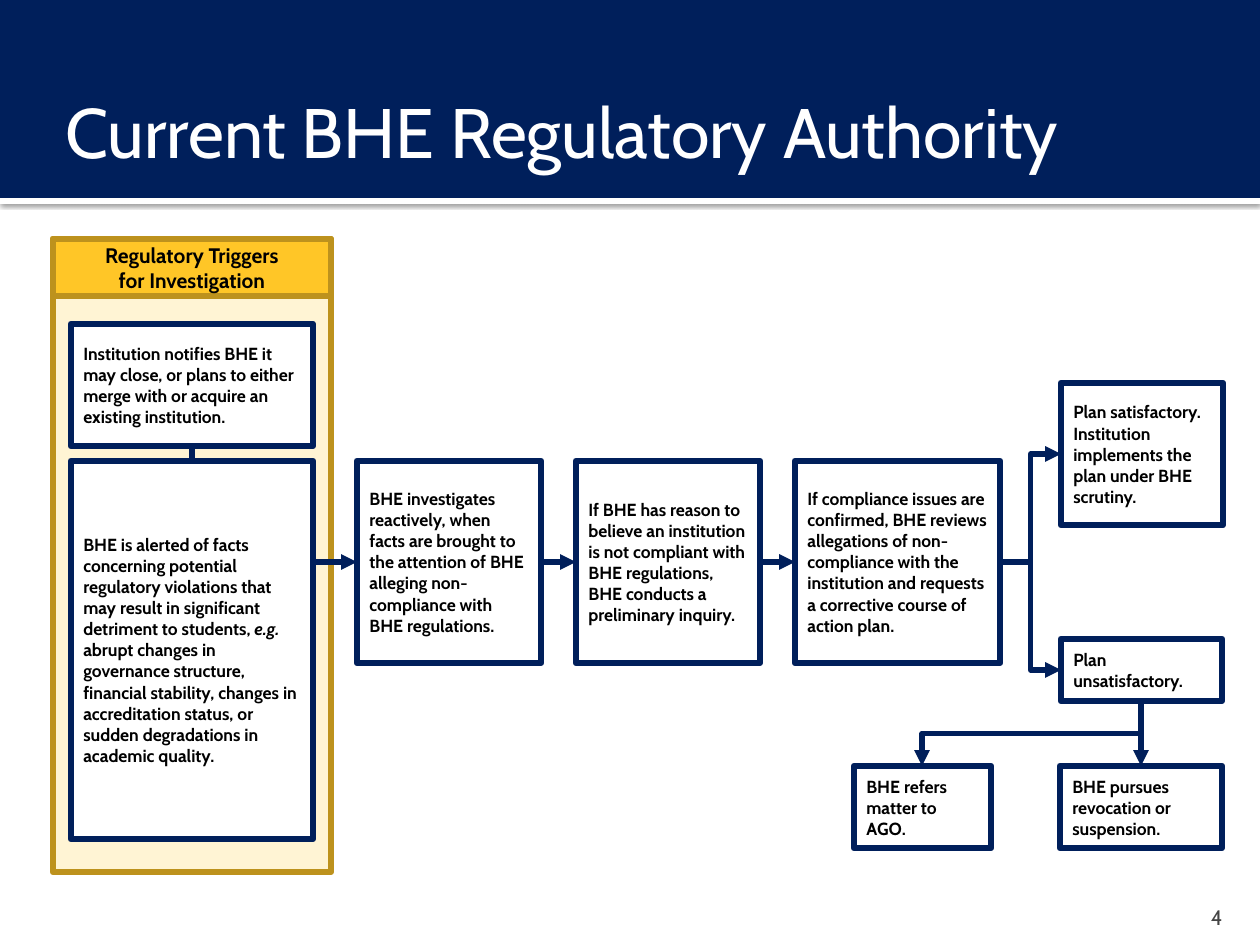
from dataclasses import dataclass
from itertools import pairwise

from lxml.etree import SubElement
from pptx import Presentation
from pptx.dml.color import RGBColor
from pptx.enum.shapes import MSO_CONNECTOR, MSO_SHAPE
from pptx.enum.text import MSO_ANCHOR, MSO_AUTO_SIZE, PP_ALIGN
from pptx.oxml.ns import qn
from pptx.util import Emu, Pt

EMU_PER_PX = 914400 / 126
FONT = "Cabin"
NAVY, WHITE, BLACK, GRAY = "001F5B", "FFFFFF", "000000", "454545"
GOLD, DARK_GOLD, CREAM = "FFC627", "BD921D", "FFF4D4"


@dataclass(frozen=True)
class Run:
    text: str
    italic: bool = False


@dataclass(frozen=True)
class Box:
    x: int
    y: int
    w: int
    h: int
    paragraphs: tuple[tuple[Run, ...], ...] = ()
    fill: str = WHITE
    border: str | None = NAVY
    size: int = 10
    align: PP_ALIGN = PP_ALIGN.LEFT

    @property
    def right(self) -> int:
        return self.x + self.w

    @property
    def bottom(self) -> int:
        return self.y + self.h

    @property
    def center(self) -> int:
        return self.x + self.w // 2

    @property
    def middle(self) -> int:
        return self.y + self.h // 2


def px(length: float) -> Emu:
    """Turn pixels into EMU."""
    return Emu(round(length * EMU_PER_PX))


def color(hex_value: str) -> RGBColor:
    """Turn a hex string into a colour."""
    return RGBColor.from_string(hex_value)


def step(x: int, y: int, w: int, h: int, text: str) -> Box:
    """Describe a process step with one plain paragraph."""
    return Box(x, y, w, h, ((Run(text),),))


def add_run(paragraph, run: Run, size: int, hex_value: str, bold: bool = False) -> None:
    """Append one formatted run to a paragraph."""
    part = paragraph.add_run()
    part.text = run.text
    part.font.name = FONT
    part.font.size = Pt(size)
    part.font.bold = bold
    part.font.italic = run.italic
    part.font.color.rgb = color(hex_value)


def draw_box(slide, box: Box):
    """Draw a rectangle with its text."""
    shape = slide.shapes.add_shape(
        MSO_SHAPE.RECTANGLE, px(box.x), px(box.y), px(box.w), px(box.h))
    shape.shadow.inherit = False
    shape.fill.solid()
    shape.fill.fore_color.rgb = color(box.fill)
    if box.border:
        shape.line.color.rgb = color(box.border)
        shape.line.width = Pt(3.78)
    else:
        shape.line.fill.background()
    frame = shape.text_frame
    frame.word_wrap = True
    frame.vertical_anchor = MSO_ANCHOR.MIDDLE
    for index, runs in enumerate(box.paragraphs):
        paragraph = frame.add_paragraph() if index else frame.paragraphs[0]
        paragraph.alignment = box.align
        for run in runs:
            add_run(paragraph, run, box.size, BLACK, bold=True)
    return shape


def draw_link(slide, start: tuple[float, float], end: tuple[float, float],
              elbow: bool = False, arrow: bool = True):
    """Draw a straight or elbow connector."""
    kind = MSO_CONNECTOR.ELBOW if elbow else MSO_CONNECTOR.STRAIGHT
    link = slide.shapes.add_connector(kind, *map(px, (*start, *end)))
    link.line.color.rgb = color(NAVY)
    link.line.width = Pt(3)
    if arrow:
        SubElement(link.line._get_or_add_ln(), qn("a:tailEnd"), type="triangle")
    SubElement(link.element.spPr, qn("a:effectLst"))
    return link


def draw_drop(slide, source: Box, target: Box) -> None:
    """Draw an elbow that leaves downward, as a connector turned by 90 degrees."""
    half_drop = (target.y - source.bottom) / 2
    half_shift = (source.center - target.center) / 2
    x, y = target.center + half_shift, source.bottom + half_drop
    link = draw_link(slide, (x - half_drop, y - half_shift),
                     (x + half_drop, y + half_shift), elbow=True)
    link.element.spPr.find(qn("a:xfrm")).set("rot", "5400000")


def draw_banner(slide) -> None:
    """Draw the title band and the shadowed rule below it."""
    rule = draw_box(slide, Box(0, 198, 1260, 6, border=None))
    effects = rule.element.spPr.find(qn("a:effectLst"))
    shadow = SubElement(effects, qn("a:outerShdw"), blurRad=str(Pt(2.5)),
                        dist=str(Pt(0.8)), dir="5400000", algn="t", rotWithShape="0")
    shade = SubElement(shadow, qn("a:srgbClr"), val=BLACK)
    SubElement(shade, qn("a:alpha"), val="60000")
    draw_box(slide, Box(0, 0, 1260, 198, fill=NAVY, border=None))


def place_title(slide, text: str) -> None:
    """Move and format the title placeholder above the banner."""
    title = slide.shapes.title
    title.left, title.top, title.width, title.height = map(px, (53, 73, 1155, 116))
    title.element.getparent().append(title.element)
    frame = title.text_frame
    frame.auto_size = MSO_AUTO_SIZE.NONE
    frame.word_wrap = True
    frame.vertical_anchor = MSO_ANCHOR.MIDDLE
    frame.margin_right = Pt(3.6)
    frame.paragraphs[0].alignment = PP_ALIGN.LEFT
    add_run(frame.paragraphs[0], Run(text), 40, WHITE)


def place_page_number(slide, number: str) -> None:
    """Write the page number at the bottom right."""
    frame = slide.shapes.add_textbox(*map(px, (1134, 892, 101, 38))).text_frame
    frame.word_wrap = True
    frame.vertical_anchor = MSO_ANCHOR.BOTTOM
    frame.margin_bottom = 0
    frame.paragraphs[0].alignment = PP_ALIGN.RIGHT
    add_run(frame.paragraphs[0], Run(number), 12, GRAY)


def main() -> None:
    """Build the slide and save it."""
    triggers = Box(53, 239, 278, 633, fill=CREAM, border=DARK_GOLD)
    heading = Box(53, 239, 278, 57, ((Run("Regulatory Triggers"),), (Run("for Investigation"),)),
                  GOLD, DARK_GOLD, 12, PP_ALIGN.CENTER)
    notice = step(71, 324, 242, 122, "Institution notifies BHE it may close, or plans to either "
                  "merge with or acquire an existing institution.")
    alert = Box(71, 461, 242, 378, ((
        Run("BHE is alerted of facts concerning potential regulatory violations that may "
            "result in significant detriment to students, "),
        Run("e.g. ", italic=True),
        Run("abrupt changes in governance structure, financial stability, changes in "
            "accreditation status, or sudden degradations in academic quality.")),))
    investigation = step(357, 461, 184, 202, "BHE investigates reactively, when facts are brought to "
                         "the attention of BHE alleging non-compliance with BHE regulations.")
    inquiry = step(576, 461, 184, 202, "If BHE has reason to believe an institution is not "
                   "compliant with BHE regulations, BHE conducts a preliminary inquiry.")
    review = step(795, 461, 205, 202, "If compliance issues are confirmed, BHE reviews allegations of "
                  "non-compliance with the institution and requests a corrective course of action plan.")
    satisfactory = step(1061, 383, 162, 142, "Plan satisfactory. Institution implements the plan "
                        "under BHE scrutiny.")
    unsatisfactory = step(1061, 639, 161, 62, "Plan unsatisfactory.")
    referral = step(854, 766, 137, 82, "BHE refers matter to AGO.")
    revocation = step(1060, 766, 162, 82, "BHE pursues revocation or suspension.")

    deck = Presentation()
    deck.slide_width, deck.slide_height = px(1260), px(945)
    slide = deck.slides.add_slide(deck.slide_layouts[5])
    draw_banner(slide)
    place_title(slide, "Current BHE Regulatory Authority")
    place_page_number(slide, "4")

    draw_box(slide, triggers)
    draw_link(slide, (notice.center, notice.bottom), (alert.center, alert.y), arrow=False)
    for box in (heading, notice, alert, investigation, inquiry, review,
                satisfactory, unsatisfactory, referral, revocation):
        draw_box(slide, box)

    flow = investigation.middle
    for source, target in pairwise((alert, investigation, inquiry, review)):
        draw_link(slide, (source.right, flow), (target.x, flow))
    for outcome in (satisfactory, unsatisfactory):
        draw_link(slide, (review.right, flow), (outcome.x, outcome.middle), elbow=True)
    for consequence in (revocation, referral):
        draw_drop(slide, unsatisfactory, consequence)
    deck.save("out.pptx")


if __name__ == "__main__":
    main()
